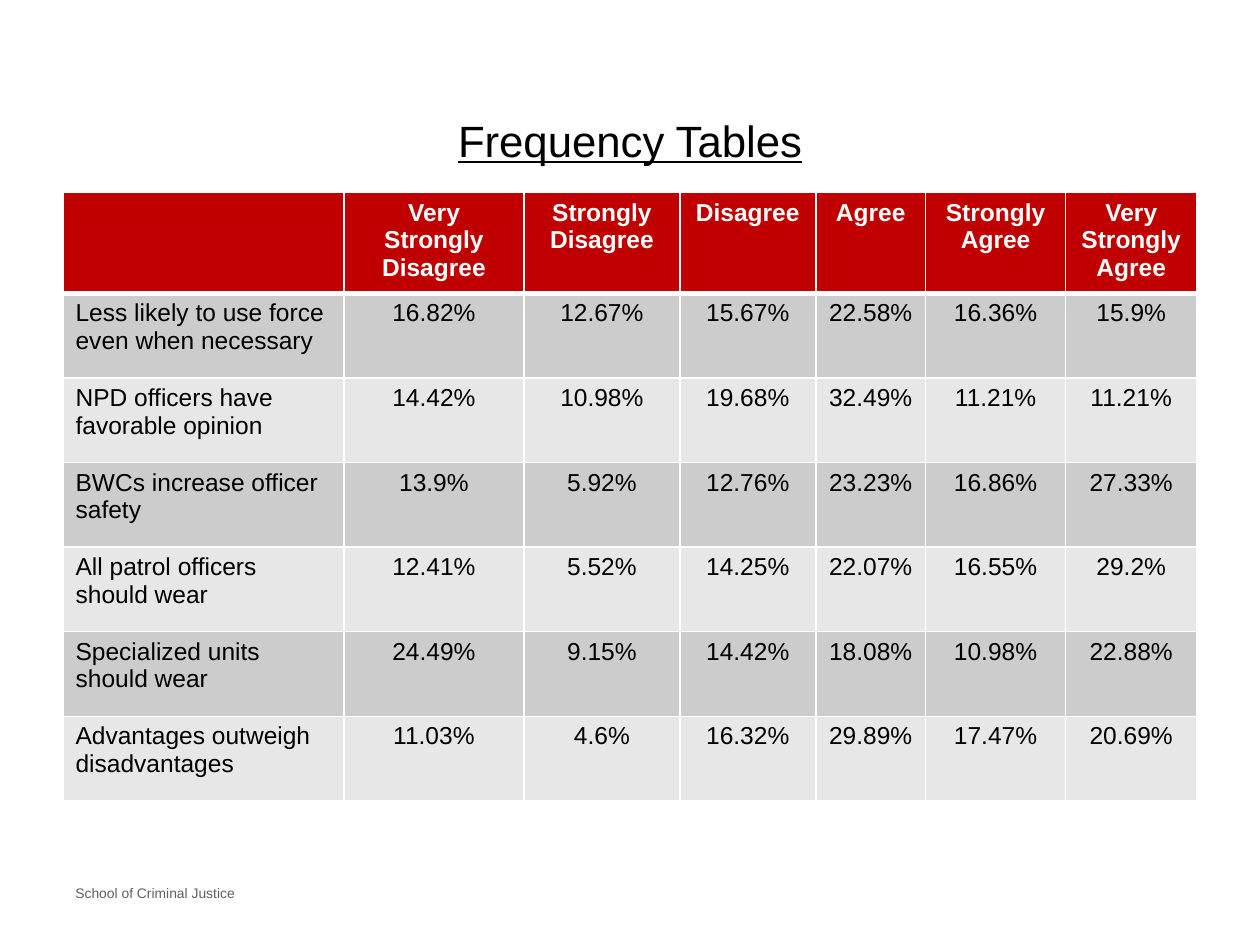
from pptx import Presentation
from pptx.dml.color import RGBColor
from pptx.enum.text import MSO_ANCHOR, PP_ALIGN
from pptx.oxml import parse_xml
from pptx.oxml.ns import nsdecls
from pptx.util import Pt

HEADER = ["", "Very Strongly Disagree", "Strongly Disagree", "Disagree",
          "Agree", "Strongly Agree", "Very Strongly Agree"]
ROWS = [
    ("Less likely to use force even when necessary",
     "16.82%", "12.67%", "15.67%", "22.58%", "16.36%", "15.9%"),
    ("NPD officers have favorable opinion",
     "14.42%", "10.98%", "19.68%", "32.49%", "11.21%", "11.21%"),
    ("BWCs increase officer safety",
     "13.9%", "5.92%", "12.76%", "23.23%", "16.86%", "27.33%"),
    ("All patrol officers should wear",
     "12.41%", "5.52%", "14.25%", "22.07%", "16.55%", "29.2%"),
    ("Specialized units should wear",
     "24.49%", "9.15%", "14.42%", "18.08%", "10.98%", "22.88%"),
    ("Advantages outweigh disadvantages",
     "11.03%", "4.6%", "16.32%", "29.89%", "17.47%", "20.69%"),
]
COLUMN_WIDTHS = [160.5, 103, 89, 77.7, 62.8, 80, 75]
HEADER_HEIGHT, ROW_HEIGHT = 57.5, 48.35


def rgb(color):
    return RGBColor.from_string(color)


class SlideBuilder:
    font = "Arial"
    red, white, black, gray = "C00000", "FFFFFF", "000000", "5F5F5F"
    bands = ("CCCCCC", "E7E7E7")

    def __init__(self, s):
        self.s = s

    def add_text(self, tf, text, color, align=PP_ALIGN.LEFT, **formats):
        p = tf.paragraphs[0]
        p.alignment = align
        r = p.add_run()
        r.text = text
        r.font.color.rgb = rgb(color)
        for name, value in {"name": self.font, **formats}.items():
            setattr(r.font, name, value)

    def title(self, text, left, top, width, height):
        sp = self.s.shapes.title
        box = {"left": left, "top": top, "width": width, "height": height}
        for name, value in box.items():
            setattr(sp, name, Pt(value))
        sp.text_frame.vertical_anchor = MSO_ANCHOR.MIDDLE
        self.add_text(sp.text_frame, text, self.black, PP_ALIGN.CENTER,
                      size=Pt(25), underline=True)

    def footer(self, text, *box):
        tf = self.s.shapes.add_textbox(*map(Pt, box)).text_frame
        tf.word_wrap = True
        self.add_text(tf, text, self.gray, size=Pt(7.9))

    def borders(self, cell, **widths):
        """Draw white cell edges; the keys are L, R, T and B in schema order."""
        for side, width in widths.items():
            cell._tc.get_or_add_tcPr().append(parse_xml(
                f'<a:ln{side} {nsdecls("a")} w="{Pt(width)}"><a:solidFill>'
                f'<a:srgbClr val="{self.white}"/></a:solidFill></a:ln{side}>'))

    def table(self, header, rows, widths, left, top):
        height = HEADER_HEIGHT + ROW_HEIGHT * len(rows)
        table = self.s.shapes.add_table(
            len(rows) + 1, len(widths), Pt(left), Pt(top),
            Pt(sum(widths)), Pt(height)).table
        for column, width in zip(table.columns, widths):
            column.width = Pt(width)
        for i, texts in enumerate([header, *rows]):
            is_header = i == 0
            table.rows[i].height = Pt(HEADER_HEIGHT if is_header else ROW_HEIGHT)
            fill = self.red if is_header else self.bands[(i - 1) % 2]
            for j, text in enumerate(texts):
                cell = table.cell(i, j)
                self.borders(cell, L=1, R=1, T=3 if i == 1 else 1,
                             B=3 if is_header else 1)
                cell.fill.solid()
                cell.fill.fore_color.rgb = rgb(fill)
                if text:
                    self.add_text(cell.text_frame, text,
                                  self.white if is_header else self.black,
                                  PP_ALIGN.CENTER if j else PP_ALIGN.LEFT,
                                  size=Pt(14), bold=is_header)


def main():
    prs = Presentation()
    prs.slide_width, prs.slide_height = Pt(720), Pt(540)
    slide = SlideBuilder(prs.slides.add_slide(prs.slide_layouts[5]))
    slide.footer("School of Criminal Justice", 36, 502, 180, 16.5)
    slide.table(HEADER, ROWS, COLUMN_WIDTHS, 36, 110)
    slide.title("Frequency Tables", 36, 48, 648, 63.5)
    prs.save("out.pptx")


if __name__ == "__main__":
    main()
